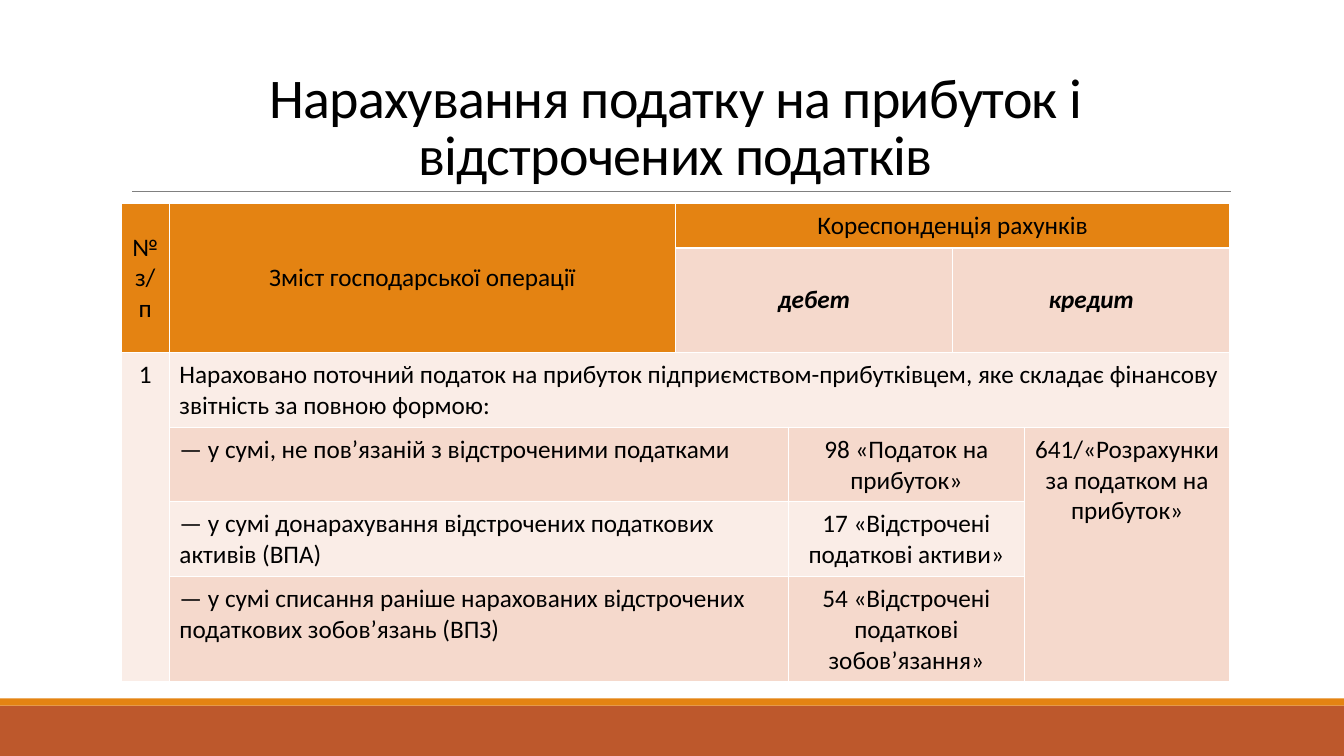
from typing import NamedTuple

from pptx import Presentation
from pptx.dml.color import RGBColor
from pptx.enum.shapes import MSO_CONNECTOR, MSO_SHAPE
from pptx.enum.text import MSO_ANCHOR, PP_ALIGN
from pptx.oxml.ns import qn
from pptx.util import Inches, Pt

RECT = MSO_SHAPE.RECTANGLE
LINE = MSO_CONNECTOR.STRAIGHT
LEFT, CENTER = PP_ALIGN.LEFT, PP_ALIGN.CENTER
TOP, MIDDLE, BOTTOM = MSO_ANCHOR.TOP, MSO_ANCHOR.MIDDLE, MSO_ANCHOR.BOTTOM

FONT = "Calibri"
COLORS = {
    "text": "000000",
    "rule": "808080",
    "rust": "BD582C",
    "orange": "E48312",
    "dark": "F5D9CC",
    "light": "FAEDE7",
}
WIDTHS = [0.48, 5.02, 1.12, 1.63, 0.71, 2.04]
ROWS = 6
HEIGHT = 0.41


class Bar(NamedTuple):
    top: float
    height: float
    color: str


class Entry(NamedTuple):
    row: int
    col: int
    rows: int
    cols: int
    text: str
    fill: str
    align: PP_ALIGN = CENTER
    anchor: MSO_ANCHOR = TOP
    strong: bool = False


BARS = [Bar(7, 0.5, "rust"), Bar(6.93, 0.07, "orange")]

ENTRIES = [
    Entry(0, 0, 2, 1, "№ з/п", "orange", anchor=MIDDLE),
    Entry(0, 1, 2, 1, "Зміст господарської операції", "orange", anchor=MIDDLE),
    Entry(0, 2, 1, 4, "Кореспонденція рахунків", "orange", anchor=MIDDLE),
    Entry(1, 2, 1, 2, "дебет", "dark", anchor=MIDDLE, strong=True),
    Entry(1, 4, 1, 2, "кредит", "dark", anchor=MIDDLE, strong=True),
    Entry(2, 0, 4, 1, "1", "light"),
    Entry(2, 1, 1, 5, "Нараховано поточний податок на прибуток "
          "підприємством-прибутківцем, яке складає фінансову звітність "
          "за повною формою:", "light", LEFT),
    Entry(3, 1, 1, 2, "— у сумі, не пов’язаній з відстроченими податками",
          "dark", LEFT),
    Entry(3, 3, 1, 2, "98 «Податок на прибуток»", "dark"),
    Entry(3, 5, 3, 1, "641/«Розрахунки за податком на прибуток»", "dark"),
    Entry(4, 1, 1, 2, "— у сумі донарахування відстрочених податкових "
          "активів (ВПА)", "light", LEFT),
    Entry(4, 3, 1, 2, "17 «Відстрочені податкові активи»", "light"),
    Entry(5, 1, 1, 2, "— у сумі списання раніше нарахованих відстрочених "
          "податкових зобов’язань (ВПЗ)", "dark", LEFT),
    Entry(5, 3, 1, 2, "54 «Відстрочені податкові зобов’язання»", "dark"),
]


def color(name: str) -> RGBColor:
    return RGBColor.from_string(COLORS[name])


def style(para, size: float, align: PP_ALIGN, strong: bool = False) -> None:
    para.alignment = align
    font = para.font
    font.name = FONT
    font.size = Pt(size)
    font.bold = font.italic = strong
    font.color.rgb = color("text")


def draw_bar(slide, bar: Bar) -> None:
    shape = slide.shapes.add_shape(
        RECT, 0, Inches(bar.top), Inches(13.33), Inches(bar.height))
    shape.shadow.inherit = False
    shape.fill.solid()
    shape.fill.fore_color.rgb = color(bar.color)
    shape.line.fill.background()


def draw_rule(slide) -> None:
    rule = slide.shapes.add_connector(
        LINE, Inches(1.31), Inches(1.9), Inches(12.21), Inches(1.9))
    rule.line.color.rgb = color("rule")
    rule.line.width = Pt(0.5)
    props = rule.element.spPr
    props.append(props.makeelement(qn("a:effectLst"), {}))


def draw_title(slide) -> None:
    box = slide.shapes.add_textbox(
        Inches(1.2), Inches(0.31), Inches(11), Inches(1.59))
    frame = box.text_frame
    frame.word_wrap = True
    frame.vertical_anchor = BOTTOM
    para = frame.paragraphs[0]
    run = para.add_run()
    run.text = "Нарахування податку на прибуток і відстрочених податків"
    run.font._element.set("spc", "-50")
    style(para, 40, CENTER)
    para.line_spacing = 0.85


def fill_cell(table, entry: Entry) -> None:
    cell = table.cell(entry.row, entry.col)
    end = table.cell(entry.row + entry.rows - 1, entry.col + entry.cols - 1)
    cell.merge(end)
    cell.text = entry.text
    cell.vertical_anchor = entry.anchor
    cell.margin_left = cell.margin_right = Inches(0.1)
    cell.margin_top = cell.margin_bottom = Inches(0.07)
    cell.fill.solid()
    cell.fill.fore_color.rgb = color(entry.fill)
    style(cell.text_frame.paragraphs[0], 18, entry.align, entry.strong)


def draw_table(slide) -> None:
    frame = slide.shapes.add_table(
        ROWS, len(WIDTHS), Inches(1.2), Inches(2.02), Inches(11), Inches(4.33))
    table = frame.table
    for column, width in zip(table.columns, WIDTHS):
        column.width = Inches(width)
    for row in table.rows:
        row.height = Inches(HEIGHT)
    frame.height = Inches(4.33)
    for entry in ENTRIES:
        fill_cell(table, entry)


def main() -> None:
    deck = Presentation()
    deck.slide_width = Inches(13.33)
    deck.slide_height = Inches(7.5)
    slide = deck.slides.add_slide(deck.slide_layouts[6])
    for bar in BARS:
        draw_bar(slide, bar)
    draw_rule(slide)
    draw_title(slide)
    draw_table(slide)
    deck.save("out.pptx")


if __name__ == "__main__":
    main()
